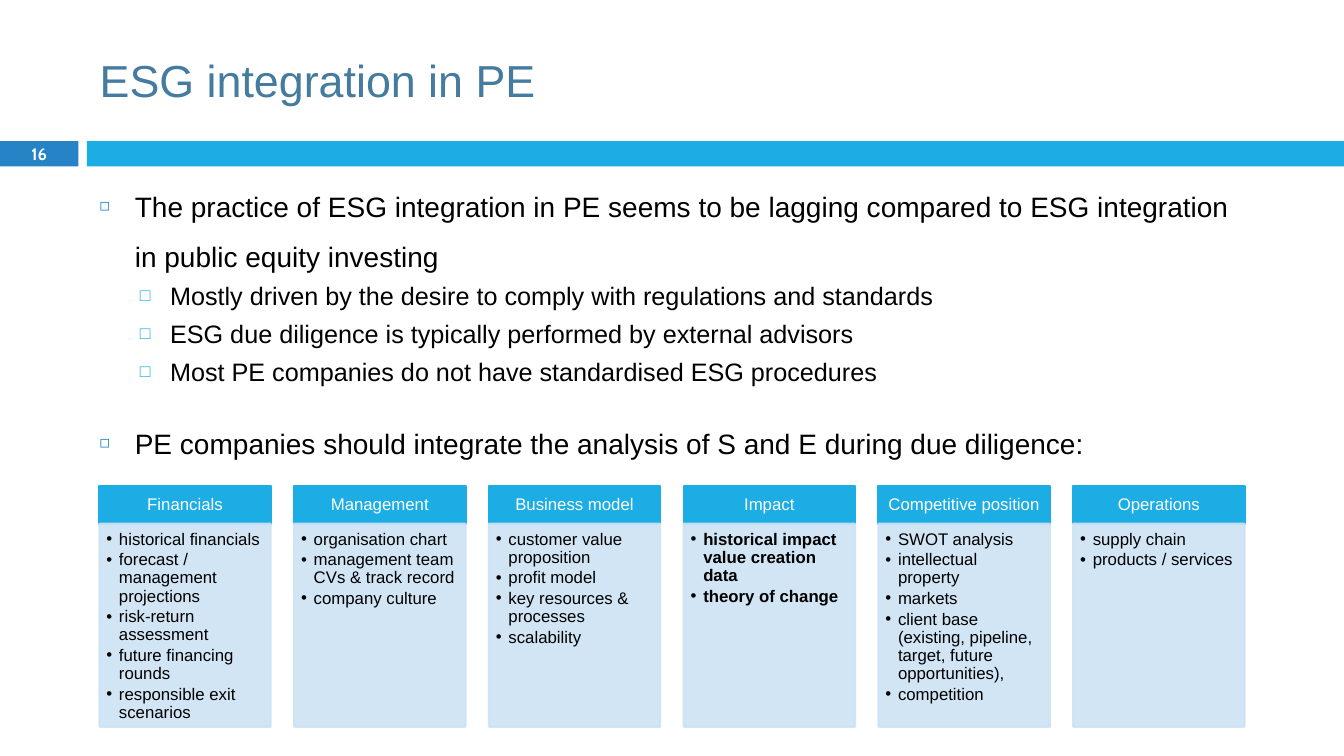
from lxml import etree
from pptx import Presentation
from pptx.dml.color import RGBColor
from pptx.enum import shapes, text
from pptx.oxml import ns
from pptx.util import Pt

COLORS = {
    "title": "457B9E", "number": "2683C6", "accent": "1CADE4",
    "panel": "CDE3F5", "text": "000000", "white": "FFFFFF",
}
MARGIN = 64
POINTS = [  # level, text, space before
    (0, "The practice of ESG integration in PE seems to be lagging compared to "
        "ESG integration in public equity investing", 7),
    (1, "Mostly driven by the desire to comply with regulations and standards", 5.5),
    (1, "ESG due diligence is typically performed by external advisors", 5.5),
    (1, "Most PE companies do not have standardised ESG procedures", 5.5),
    (0, "PE companies should integrate the analysis of S and E during due diligence:", 16),
]
LEVELS = [  # left indent, hanging indent, line spacing, size, bullet, colour, bullet percent
    (25.2, 25.2, 1.5, 20, "◻", "number", 60),
    (50.4, 21.6, 1.0, 18, "□", "accent", 70),
]
TOPICS = {
    "Financials": ["historical financials", "forecast / management projections",
                   "risk-return assessment", "future financing rounds",
                   "responsible exit scenarios"],
    "Management": ["organisation chart", "management team CVs & track record",
                   "company culture"],
    "Business model": ["customer value proposition", "profit model",
                       "key resources & processes", "scalability"],
    "Impact": ["historical impact value creation data", "theory of change"],
    "Competitive position": ["SWOT analysis", "intellectual property", "markets",
                             "client base (existing, pipeline, target, future opportunities),",
                             "competition"],
    "Operations": ["supply chain", "products / services"],
}
EMPHASISED_TOPIC = "Impact"


def rgb(name):
    return RGBColor.from_string(COLORS[name])


def style(paragraph, size, color, bold=False, font="Arial"):
    paragraph.font.size = Pt(size)
    paragraph.font.name = font
    paragraph.font.bold = bold
    paragraph.font.color.rgb = rgb(color)


def add_bullet(paragraph, character, left, hanging, color, percent=100):
    properties = paragraph._p.get_or_add_pPr()
    properties.set("marL", str(Pt(left)))
    properties.set("indent", str(-Pt(hanging)))
    bullet_color = etree.SubElement(properties, ns.qn("a:buClr"))
    etree.SubElement(bullet_color, ns.qn("a:srgbClr"), val=COLORS[color])
    etree.SubElement(properties, ns.qn("a:buSzPct"), val=str(percent * 1000))
    etree.SubElement(properties, ns.qn("a:buFont"), typeface="Arial")
    etree.SubElement(properties, ns.qn("a:buChar"), char=character)


def set_frame(frame, anchor, insets):
    frame.word_wrap = True
    frame.auto_size = text.MSO_AUTO_SIZE.NONE
    frame.vertical_anchor = anchor
    (frame.margin_left, frame.margin_top,
     frame.margin_right, frame.margin_bottom) = map(Pt, insets)


def add_paragraphs(frame, lines):
    for index, line in enumerate(lines):
        paragraph = frame.paragraphs[0] if index == 0 else frame.add_paragraph()
        paragraph.text = line
        yield paragraph


def add_block(slide, box, color, outlined=False, alpha=None):
    block = slide.shapes.add_shape(shapes.MSO_SHAPE.RECTANGLE, *map(Pt, box))
    block.shadow.inherit = False
    block.fill.solid()
    block.fill.fore_color.rgb = rgb(color)
    if outlined:
        block.line.color.rgb = rgb(color)
        block.line.width = Pt(1.5)
    else:
        block.line.fill.background()
    if alpha:
        for swatch in block._element.spPr.iter(ns.qn("a:srgbClr")):
            etree.SubElement(swatch, ns.qn("a:alpha"), val=str(alpha * 1000))
    return block


def add_band(slide, left, top, width, height):
    number_width, gap = 56, 6
    number = add_block(slide, (left, top, number_width, height), "number")
    bar_left = left + number_width + gap
    add_block(slide, (bar_left, top, left + width - bar_left, height), "accent")
    set_frame(number.text_frame, text.MSO_ANCHOR.MIDDLE, (0, 0, 0, 0))
    paragraph = number.text_frame.paragraphs[0]
    paragraph.text = "16"
    paragraph.alignment = text.PP_ALIGN.CENTER
    style(paragraph, 11.9, "white", bold=True, font="Cabin")


def place_title(slide, left, top, width, height):
    title = slide.shapes.title
    title.left, title.top, title.width, title.height = map(Pt, (left, top, width, height))
    set_frame(title.text_frame, text.MSO_ANCHOR.MIDDLE, (7.2, 3.6, 7.2, 3.6))
    paragraph = title.text_frame.paragraphs[0]
    paragraph.text = "ESG integration in PE"
    paragraph.alignment = text.PP_ALIGN.LEFT
    style(paragraph, 32, "title")


def add_points(slide, left, top, width, height):
    frame = slide.shapes.add_textbox(*map(Pt, (left, top, width, height))).text_frame
    set_frame(frame, text.MSO_ANCHOR.TOP, (7.2, 3.6, 7.2, 3.6))
    paragraphs = add_paragraphs(frame, [line for _, line, _ in POINTS])
    for paragraph, (level, _, space_before) in zip(paragraphs, POINTS):
        indent, hanging, spacing, size, character, color, percent = LEVELS[level]
        paragraph.level = level
        paragraph.line_spacing = spacing
        paragraph.space_before = Pt(space_before)
        add_bullet(paragraph, character, indent, hanging, color, percent)
        style(paragraph, size, "text")


def add_topic(slide, heading, items, left, top, width, height):
    heading_height = 27
    # Heading
    header = add_block(slide, (left, top, width, heading_height), "accent", outlined=True)
    set_frame(header.text_frame, text.MSO_ANCHOR.MIDDLE, (6.5, 3.6, 6.5, 3.6))
    paragraph = header.text_frame.paragraphs[0]
    paragraph.text = heading
    paragraph.alignment = text.PP_ALIGN.CENTER
    paragraph.line_spacing = 0.9
    style(paragraph, 12, "white")
    # Items
    panel = add_block(slide, (left, top + heading_height, width, height - heading_height),
                      "panel", outlined=True, alpha=90)
    set_frame(panel.text_frame, text.MSO_ANCHOR.TOP, (5, 5, 6.5, 7.2))
    for paragraph in add_paragraphs(panel.text_frame, items):
        paragraph.alignment = text.PP_ALIGN.LEFT
        paragraph.line_spacing = 0.9
        paragraph.space_after = Pt(1.8)
        add_bullet(paragraph, "•", 9, 9, "text")
        style(paragraph, 12, "text", bold=heading == EMPHASISED_TOPIC)


def add_topics(slide, left, top, width, height):
    column_width = 122.4
    pitch = (width - column_width) / (len(TOPICS) - 1)
    for index, (heading, items) in enumerate(TOPICS.items()):
        add_topic(slide, heading, items, left + index * pitch, top, column_width, height)


def main():
    presentation = Presentation()
    presentation.slide_width, presentation.slide_height = Pt(960), Pt(540)
    slide = presentation.slides.add_slide(presentation.slide_layouts[5])
    add_band(slide, 0, 100.8, 960, 18)
    place_title(slide, MARGIN, 18, 856, 78)
    add_points(slide, MARGIN, 119.5, 832, 388)
    add_topics(slide, MARGIN + 7, 347, 818, 172.2)
    presentation.save("out.pptx")


if __name__ == "__main__":
    main()
